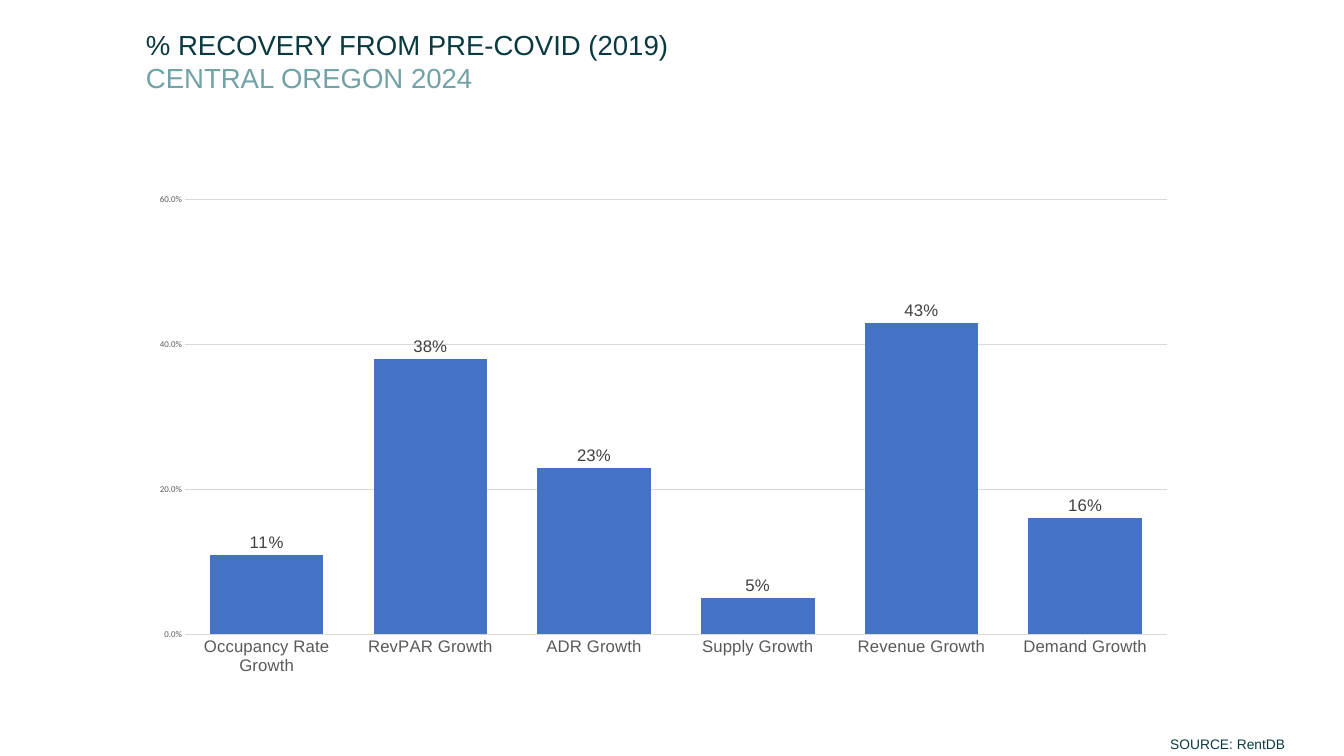
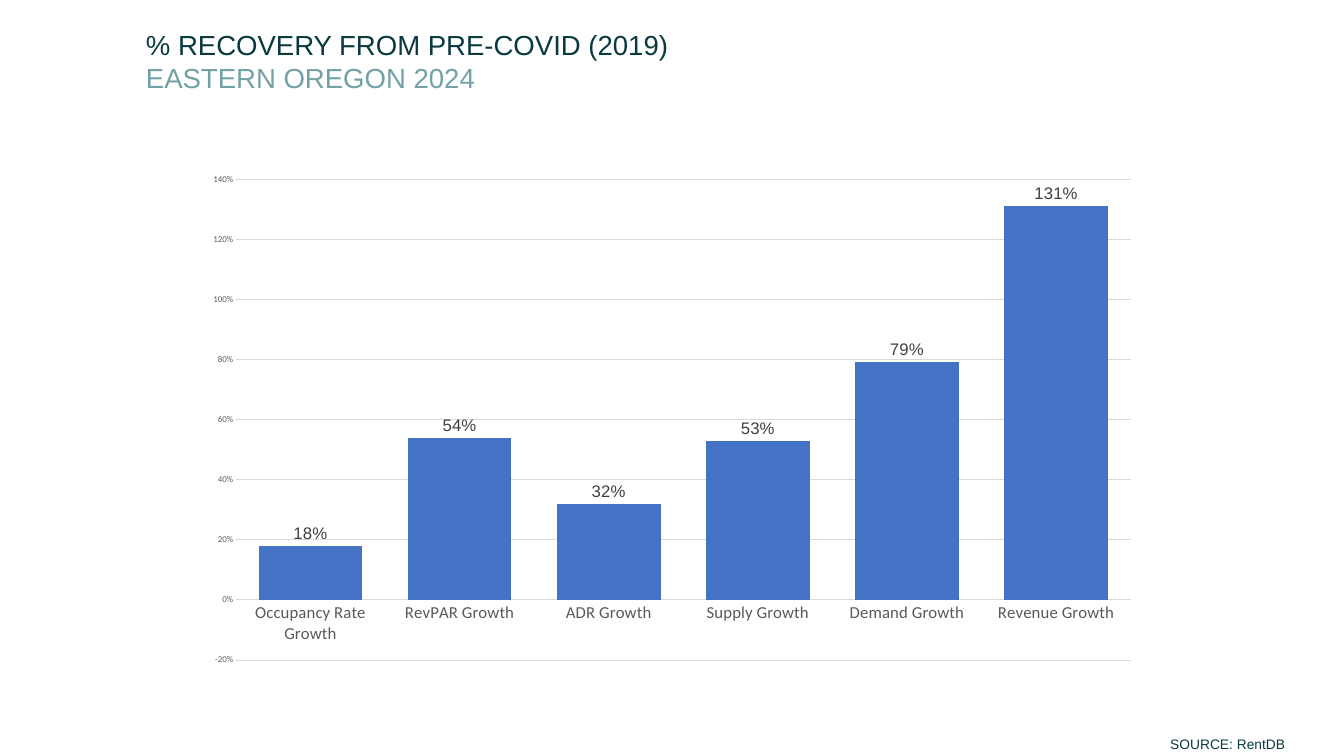
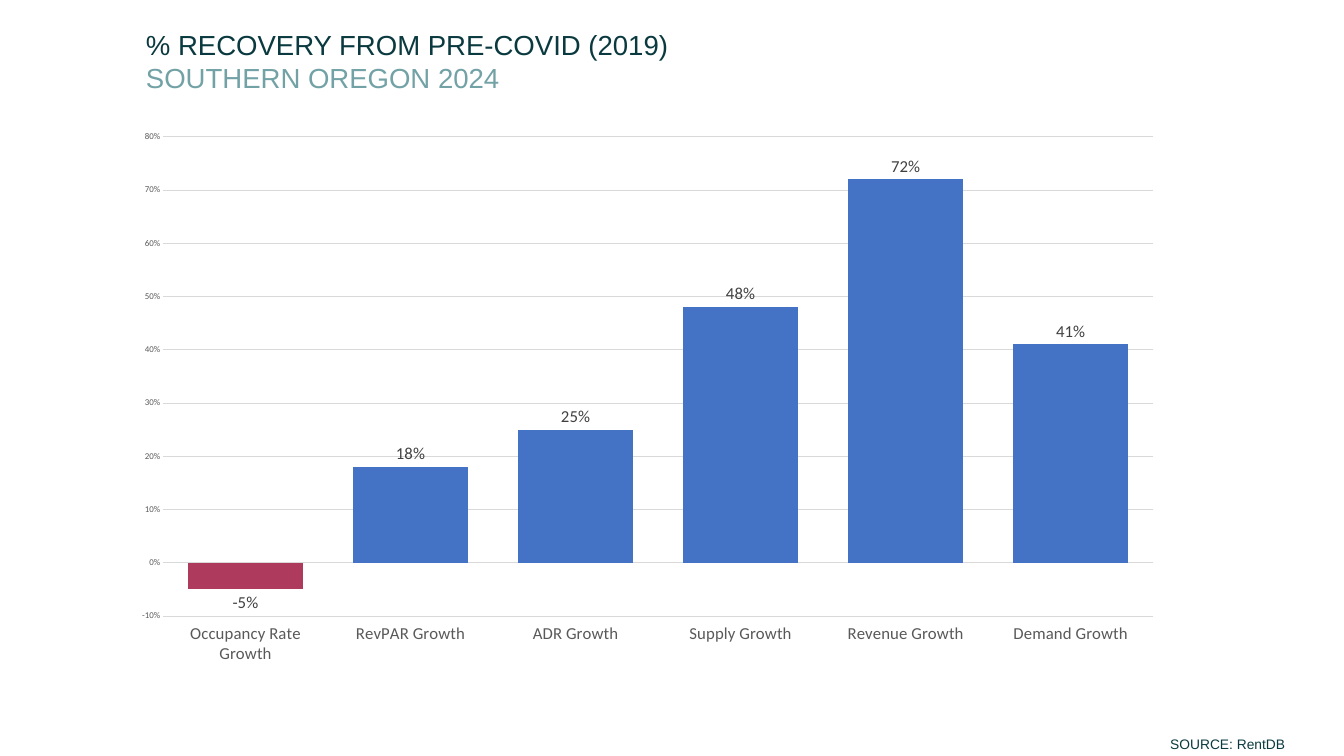
from dataclasses import dataclass
from typing import Optional

from pptx import Presentation
from pptx.chart.data import CategoryChartData as ChartData
from pptx.dml.color import RGBColor
from pptx.enum.chart import XL_CHART_TYPE as Kind
from pptx.enum.chart import XL_LABEL_POSITION as Spot
from pptx.enum.chart import XL_TICK_LABEL_POSITION as Side
from pptx.enum.chart import XL_TICK_MARK as Tick
from pptx.util import Cm, Pt

DARK = RGBColor(0x0A, 0x3A, 0x3F)
TEAL = RGBColor(0x72, 0xA2, 0xA6)
BLUE = RGBColor(0x44, 0x72, 0xC4)
RED = RGBColor(0xAE, 0x3A, 0x5D)
GREY = RGBColor(0x59, 0x59, 0x59)
INK = RGBColor(0x40, 0x40, 0x40)
RULE = RGBColor(0xD9, 0xD9, 0xD9)
BLACK = RGBColor(0, 0, 0)
ARIAL = "Arial"
CALIBRI = "Calibri"

TITLE = "% RECOVERY FROM PRE-COVID (2019)"
SOURCE = "SOURCE: RentDB"
RATE, ROOM, DAILY, SUPPLY, SALES, DEMAND = (
    f"{name} Growth"
    for name in ("Occupancy Rate", "RevPAR", "ADR", "Supply", "Revenue", "Demand")
)


@dataclass(frozen=True)
class Box:
    left: float
    top: float
    width: float
    height: float

    def place(self) -> tuple:
        return Cm(self.left), Cm(self.top), Cm(self.width), Cm(self.height)


@dataclass(frozen=True)
class Line:
    text: str
    size: float
    color: RGBColor


@dataclass(frozen=True)
class Scale:
    low: float
    high: float
    step: float
    form: str = "0%"


@dataclass(frozen=True)
class Region:
    name: str
    box: Box
    scale: Scale
    bars: dict[str, float]
    cat_font: str = CALIBRI
    label_font: str = ARIAL
    cat_side: Optional[Side] = None


HEAD = Box(4.98, 0.86, 24.43, 2.64)
FOOT = Box(41.68, 26.24, 6.1, 0.86)

REGIONS = [
    Region(
        "CENTRAL OREGON 2024",
        Box(4.98, 6.6, 37.59, 17.98),
        Scale(0, 0.6, 0.2, "0.0%"),
        {RATE: 0.11, ROOM: 0.38, DAILY: 0.23, SUPPLY: 0.05, SALES: 0.43, DEMAND: 0.16},
        cat_font=ARIAL,
    ),
    Region(
        "EASTERN OREGON 2024",
        Box(6.96, 5.87, 34.24, 18.34),
        Scale(-0.2, 1.4, 0.2),
        {RATE: 0.18, ROOM: 0.54, DAILY: 0.32, SUPPLY: 0.53, DEMAND: 0.79, SALES: 1.31},
    ),
    Region(
        "SOUTHERN OREGON 2024",
        Box(4.34, 4.32, 37.74, 19.89),
        Scale(-0.1, 0.8, 0.1),
        {RATE: -0.05, ROOM: 0.18, DAILY: 0.25, SUPPLY: 0.48, SALES: 0.72, DEMAND: 0.41},
        label_font=CALIBRI,
        cat_side=Side.LOW,
    ),
]


def style(font, size: float, color: RGBColor, name: str) -> None:
    font.size = Pt(size)
    font.color.rgb = color
    font.name = name


def rule(line) -> None:
    line.color.rgb = RULE
    line.width = Pt(0.75)


def fill(mark, color: RGBColor) -> None:
    mark.format.fill.solid()
    mark.format.fill.fore_color.rgb = color


def add_text(slide, box: Box, lines: list[Line]) -> None:
    frame = slide.shapes.add_textbox(*box.place()).text_frame
    frame.word_wrap = True
    for i, line in enumerate(lines):
        para = frame.add_paragraph() if i else frame.paragraphs[0]
        run = para.add_run()
        run.text = line.text
        style(run.font, line.size, line.color, ARIAL)


def set_axes(chart, area: Region) -> None:
    cat, val, scale = chart.category_axis, chart.value_axis, area.scale
    for axis in (cat, val):
        axis.major_tick_mark = axis.minor_tick_mark = Tick.NONE
    style(cat.tick_labels.font, 17, GREY, area.cat_font)
    rule(cat.format.line)
    if area.cat_side is not None:
        cat.tick_label_position = area.cat_side
    style(val.tick_labels.font, 9, GREY, CALIBRI)
    val.format.line.fill.background()
    val.has_major_gridlines = True
    rule(val.major_gridlines.format.line)
    val.minimum_scale, val.maximum_scale = scale.low, scale.high
    val.major_unit = scale.step
    val.tick_labels.number_format = scale.form
    val.tick_labels.number_format_is_linked = False


def add_bars(slide, area: Region) -> None:
    data = ChartData(number_format="0%")
    data.categories = list(area.bars)
    data.add_series("Series 1", list(area.bars.values()))
    chart = slide.shapes.add_chart(
        Kind.COLUMN_CLUSTERED, *area.box.place(), data
    ).chart
    chart.has_title = chart.has_legend = False
    style(chart.font, 10, BLACK, CALIBRI)
    set_axes(chart, area)

    plot = chart.plots[0]
    plot.vary_by_categories = False
    plot.gap_width, plot.overlap = 44, -27
    bars = plot.series[0]
    bars.invert_if_negative = False
    fill(bars, BLUE)
    for i, value in enumerate(area.bars.values()):
        if value < 0:
            fill(bars.points[i], RED)

    labels = bars.data_labels
    labels.show_value = True
    labels.position = Spot.OUTSIDE_END
    labels.number_format = "0%"
    labels.number_format_is_linked = False
    style(labels.font, 17, INK, area.label_font)


def main() -> None:
    deck = Presentation()
    deck.slide_width, deck.slide_height = Cm(48.16), Cm(27.1)
    for area in REGIONS:
        slide = deck.slides.add_slide(deck.slide_layouts[6])
        add_text(slide, HEAD, [Line(TITLE, 28, DARK), Line(area.name, 28, TEAL)])
        add_text(slide, FOOT, [Line(SOURCE, 14, DARK)])
        add_bars(slide, area)
    deck.save("out.pptx")


if __name__ == "__main__":
    main()
